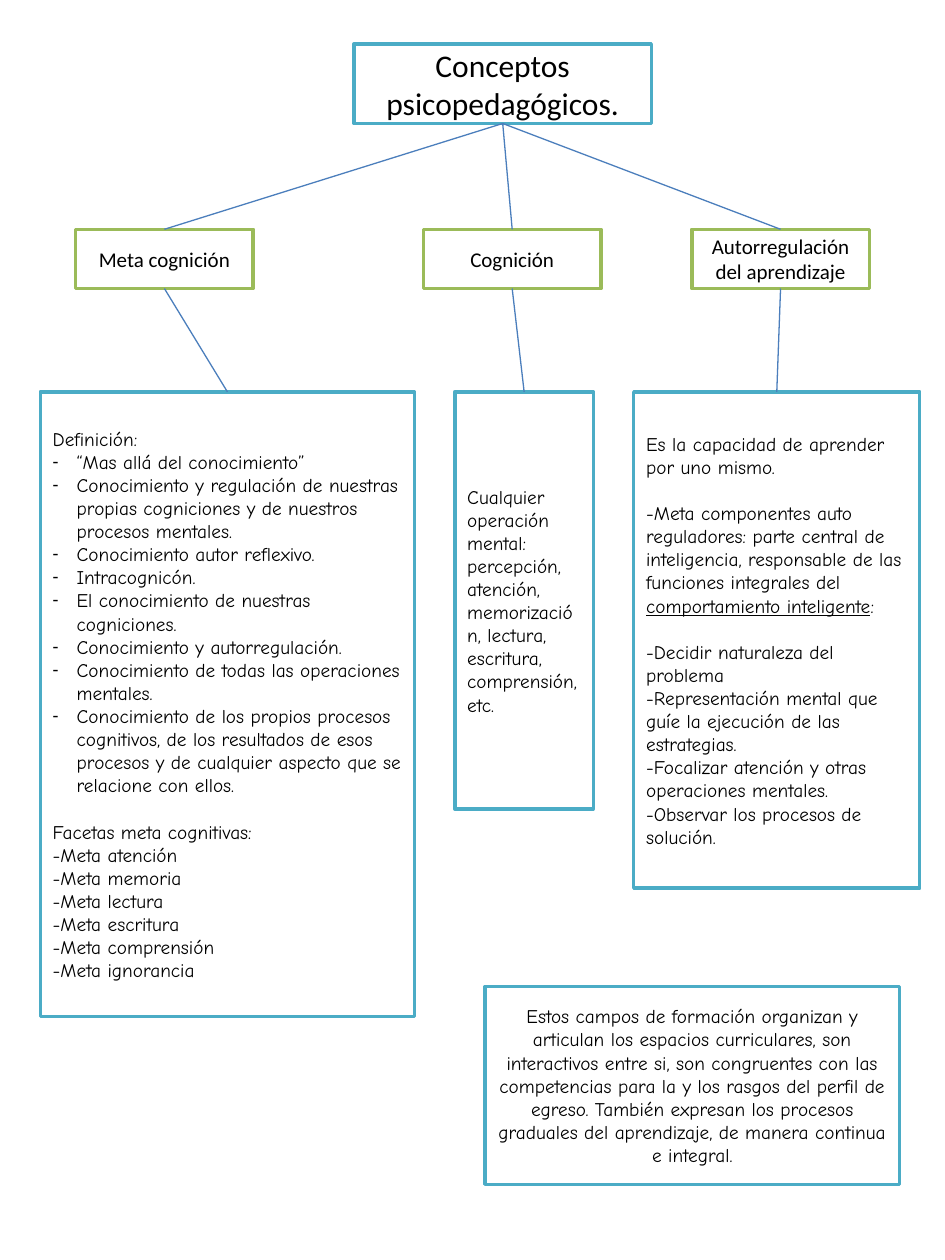
import pptx
import pptx.dml.color
import pptx.enum.shapes
import pptx.enum.text
import pptx.oxml
import pptx.oxml.ns
import pptx.util
from pptx.util import Inches

RGBColor = pptx.dml.color.RGBColor
Align = pptx.enum.text.PP_ALIGN
WHITE = RGBColor(0xFF, 0xFF, 0xFF)
BLACK = RGBColor(0x00, 0x00, 0x00)
TEAL = RGBColor(0x4B, 0xAC, 0xC6)
GREEN = RGBColor(0x9B, 0xBB, 0x59)
BLUE = RGBColor(0x4B, 0x7E, 0xBC)

HEADING_FONT = "Calibri"
BODY_FONT = "Comic Neue"
BODY_SIZE = 11
SECTION_GAP = 13.2  # one line of body text, in points
BULLET_INDENT = Inches(0.19)
TOP, LEFT, BOTTOM, RIGHT = range(4)

CONCEPT_TOP, CONCEPT_WIDTH, CONCEPT_HEIGHT = 1.82, 1.41, 0.47
DETAIL_TOP = 3.11
UNDERLINED = "comportamiento inteligente"

# Each detail is a list of sections; a line that starts with "• " is bulleted
METACOGNITION = [
    ["Definición:",
     "• “Mas allá del conocimiento”",
     "• Conocimiento y regulación de nuestras propias cogniciones y de nuestros procesos mentales.",
     "• Conocimiento autor reflexivo.",
     "• Intracognicón.",
     "• El conocimiento de nuestras cogniciones.",
     "• Conocimiento y autorregulación.",
     "• Conocimiento de todas las operaciones mentales.",
     "• Conocimiento de los propios procesos cognitivos, de los resultados de esos procesos "
     "y de cualquier aspecto que se relacione con ellos."],
    ["Facetas meta cognitivas:", "-Meta atención", "-Meta memoria", "-Meta lectura",
     "-Meta escritura", "-Meta comprensión", "-Meta ignorancia"],
]
COGNITION = [
    ["Cualquier operación mental: percepción, atención, memorización, lectura, escritura, "
     "comprensión, etc."],
]
SELF_REGULATION = [
    ["Es la capacidad de aprender por uno mismo."],
    ["-Meta componentes auto reguladores: parte central de inteligencia, responsable de las "
     "funciones integrales del comportamiento inteligente:"],
    ["-Decidir naturaleza del problema",
     "-Representación mental que guíe la ejecución de las estrategias.",
     "-Focalizar atención y otras operaciones mentales.",
     "-Observar los procesos de solución."],
]
# Concept, its left edge, then left, width, height and text of its detail
BRANCHES = [
    ("Meta cognición", 0.6, 0.32, 2.97, 4.96, METACOGNITION),
    ("Cognición", 3.36, 3.61, 1.1, 3.31, COGNITION),
    ("Autorregulación del aprendizaje", 5.49, 5.03, 2.27, 3.94, SELF_REGULATION),
]
SUMMARY = ("Estos campos de formación organizan y articulan los espacios curriculares, son "
           "interactivos entre si, son congruentes con las competencias para la y los rasgos "
           "del perfil de egreso. También expresan los procesos graduales del aprendizaje, "
           "de manera continua e integral.")


def add_box(slide, box, outline):
    """Add a white outlined rectangle; box is left, top, width, height in inches."""
    frame = slide.shapes.add_shape(
        pptx.enum.shapes.MSO_SHAPE.RECTANGLE, *(Inches(length) for length in box))
    frame.shadow.inherit = False
    frame.fill.solid()
    frame.fill.fore_color.rgb = WHITE
    frame.line.color.rgb = outline
    frame.line.width = pptx.util.Pt(2)
    frame.text_frame.word_wrap = True
    frame.text_frame.vertical_anchor = pptx.enum.text.MSO_ANCHOR.MIDDLE
    return frame


def format_runs(paragraph, font_name, size, align):
    paragraph.alignment = align
    for run in paragraph.runs:
        run.font.name = font_name
        run.font.size = pptx.util.Pt(size)
        run.font.color.rgb = BLACK


def add_label(slide, box, outline, text, font_name, size):
    """Add a box with one centred paragraph."""
    label = add_box(slide, box, outline)
    label.text_frame.text = text
    format_runs(label.text_frame.paragraphs[0], font_name, size, Align.CENTER)
    return label


def add_dash_bullet(paragraph):
    properties = paragraph._p.get_or_add_pPr()
    properties.set("marL", str(BULLET_INDENT))
    properties.set("indent", str(-BULLET_INDENT))
    for tag, attribute, value in (("buFont", "typeface", HEADING_FONT), ("buChar", "char", "-")):
        bullet = pptx.oxml.parse_xml(
            f'<a:{tag} {pptx.oxml.ns.nsdecls("a")} {attribute}="{value}"/>')
        properties.append(bullet)


def add_detail(slide, box, sections):
    """Add a box of left-aligned text, with a gap before each later section."""
    detail = add_box(slide, box, TEAL)
    text_frame = detail.text_frame
    for section_index, section in enumerate(sections):
        for line_index, line in enumerate(section):
            first = section_index == line_index == 0
            paragraph = text_frame.paragraphs[0] if first else text_frame.add_paragraph()
            if line.startswith("• "):
                add_dash_bullet(paragraph)
            for part in line.removeprefix("• ").partition(UNDERLINED):
                if part:
                    run = paragraph.add_run()
                    run.text = part
                    if part == UNDERLINED:
                        run.font.underline = True
            format_runs(paragraph, BODY_FONT, BODY_SIZE, Align.LEFT)
            if line_index == 0 and not first:
                paragraph.space_before = pptx.util.Pt(SECTION_GAP)
    return detail


def link(slide, upper, lower):
    """Join the bottom of one box to the top of another."""
    connector = slide.shapes.add_connector(
        pptx.enum.shapes.MSO_CONNECTOR.STRAIGHT, 0, 0, 0, 0)
    connector.begin_connect(upper, BOTTOM)
    connector.end_connect(lower, TOP)
    connector.line.color.rgb = BLUE
    connector.line.width = pptx.util.Pt(0.75)
    connector._element.spPr.append(
        pptx.oxml.parse_xml(f'<a:effectLst {pptx.oxml.ns.nsdecls("a")}/>'))


def add_branch(slide, title, branch):
    """Add a concept with its detail below, linked to the title."""
    name, concept_left, detail_left, detail_width, detail_height, sections = branch
    concept_box = (concept_left, CONCEPT_TOP, CONCEPT_WIDTH, CONCEPT_HEIGHT)
    concept = add_label(slide, concept_box, GREEN, name, HEADING_FONT, 12)
    detail_box = (detail_left, DETAIL_TOP, detail_width, detail_height)
    detail = add_detail(slide, detail_box, sections)
    link(slide, title, concept)
    link(slide, concept, detail)


def main():
    presentation = pptx.Presentation()
    presentation.slide_width = Inches(7.5)
    presentation.slide_height = Inches(10)
    slide = presentation.slides.add_slide(presentation.slide_layouts[6])

    # Closing summary
    add_label(slide, (3.85, 7.83, 3.29, 1.57), TEAL, SUMMARY, BODY_FONT, BODY_SIZE)

    # Concept map
    title = add_label(slide, (2.81, 0.35, 2.36, 0.63), TEAL,
                      "Conceptos psicopedagógicos.", HEADING_FONT, 18)
    for branch in BRANCHES:
        add_branch(slide, title, branch)

    presentation.save("out.pptx")


if __name__ == "__main__":
    main()
